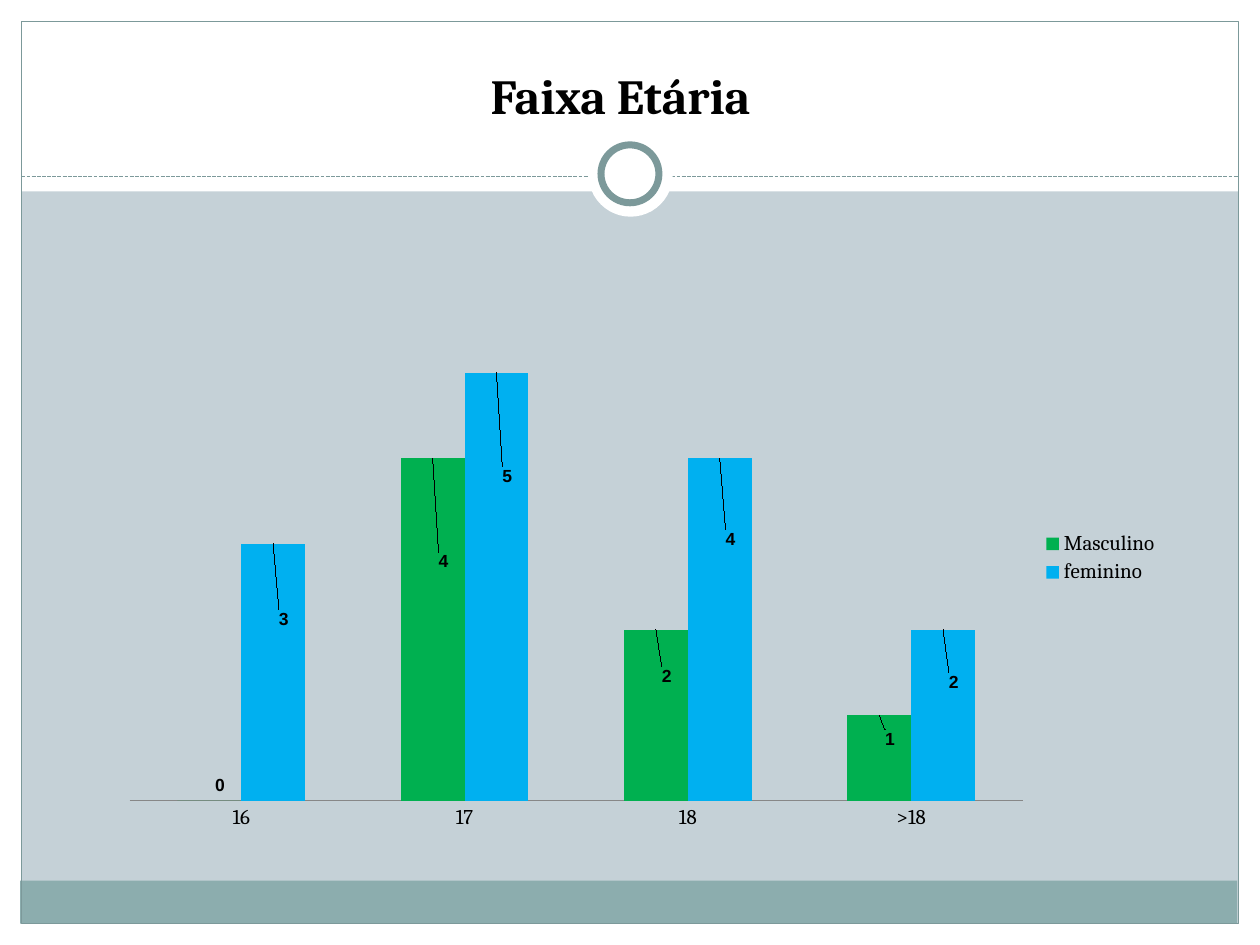
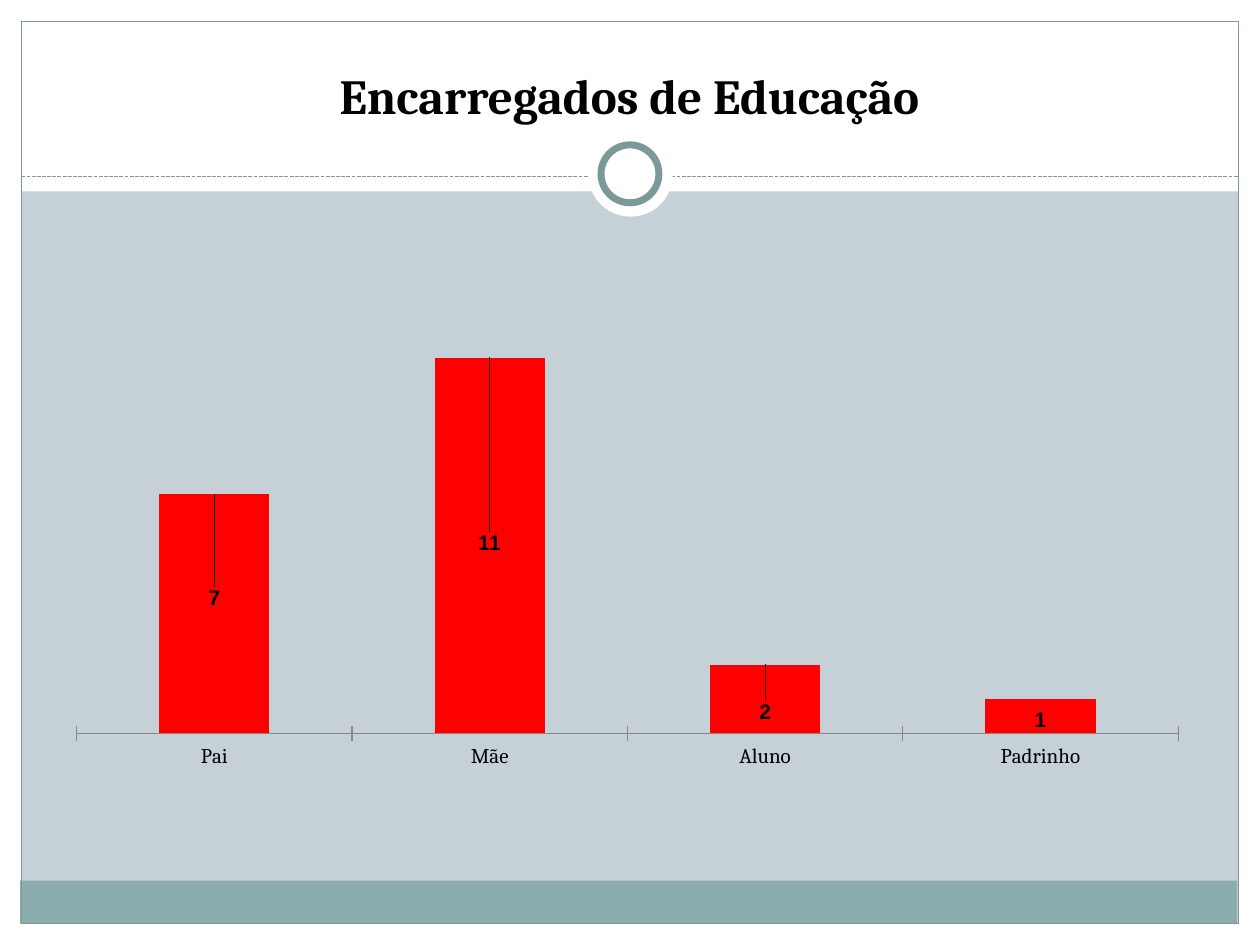
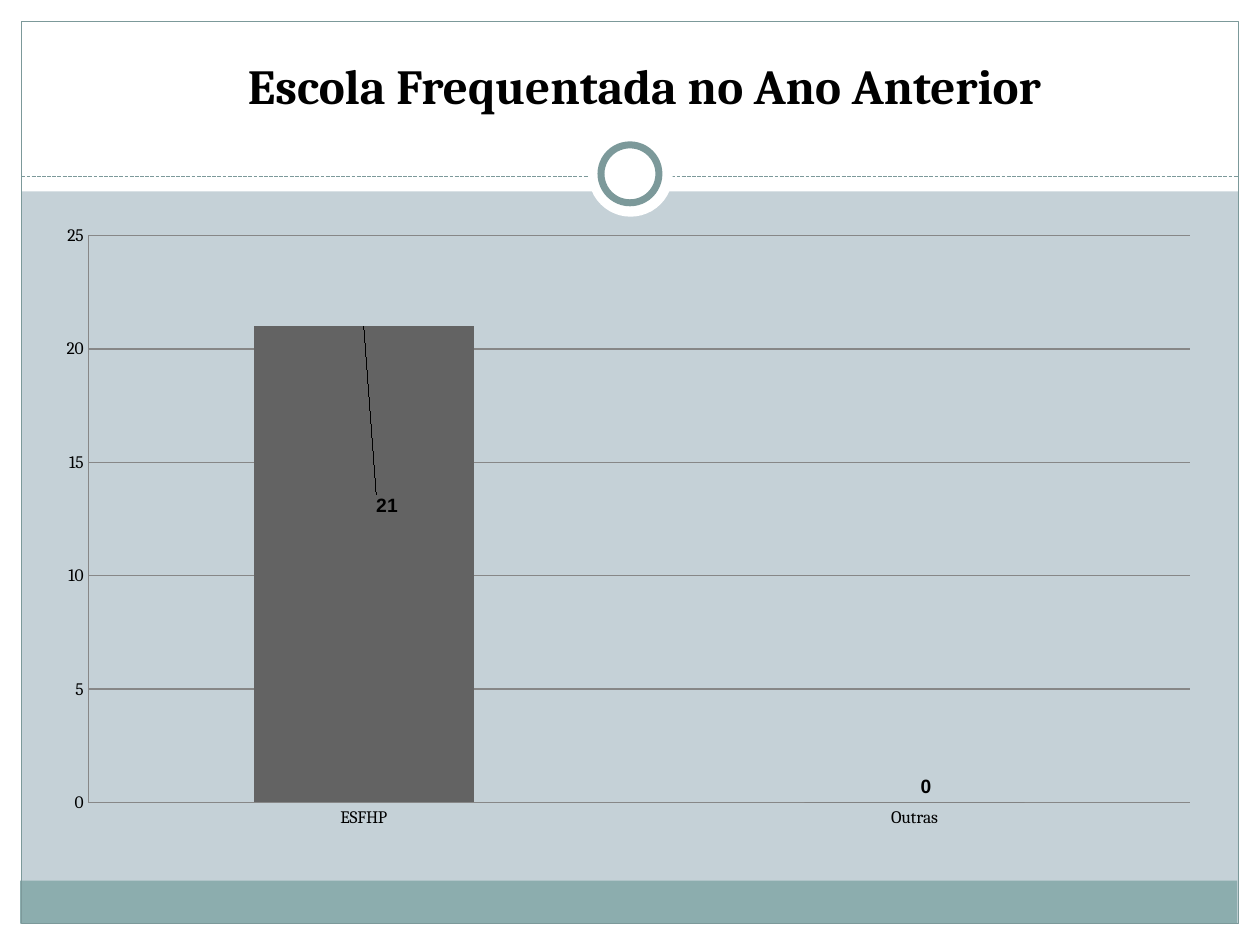
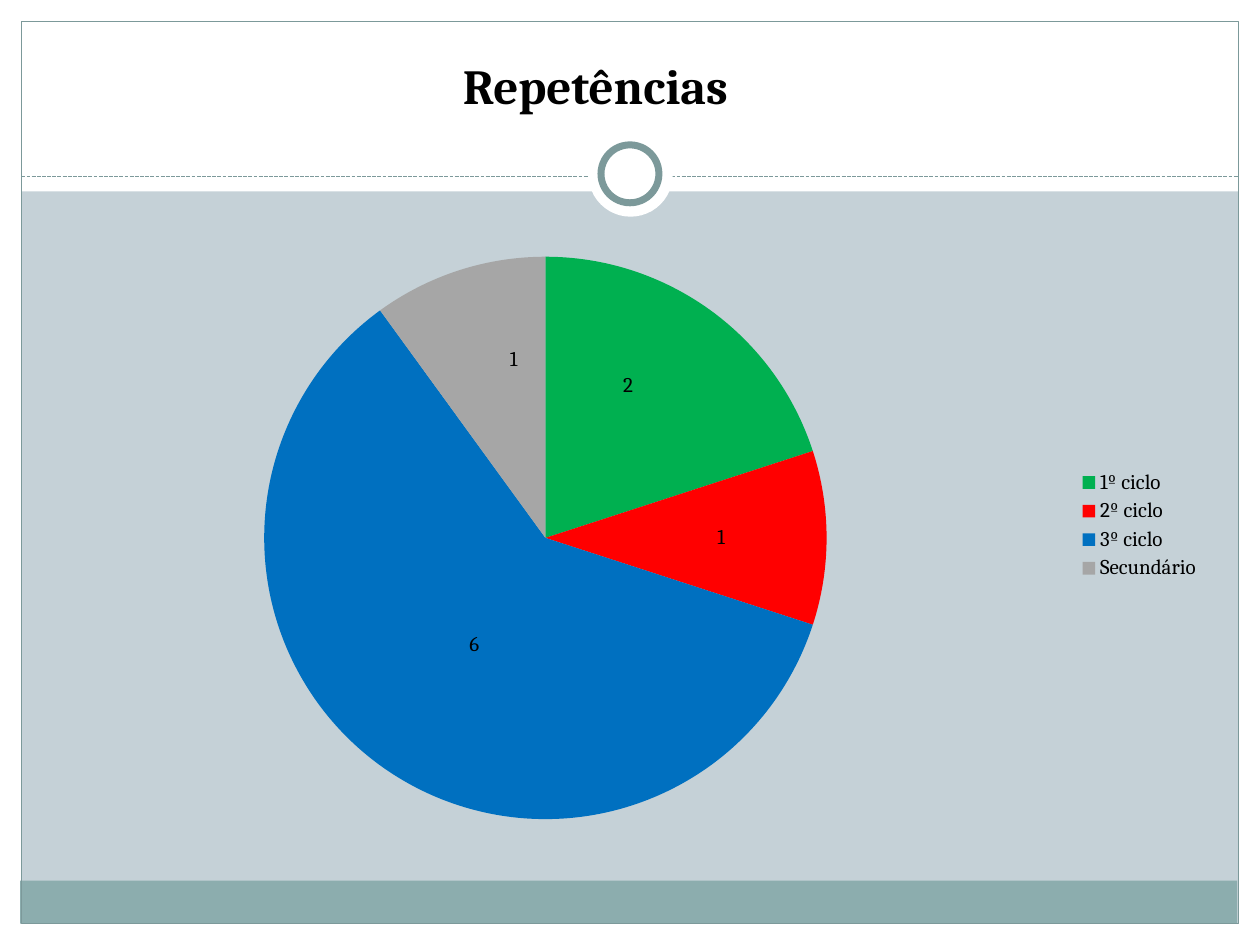
import pptx
import pptx.chart.data
import pptx.dml.color
import pptx.enum.chart
import pptx.enum.dml
import pptx.enum.shapes
import pptx.enum.text
import pptx.oxml
import pptx.oxml.ns
import pptx.util

Inches = pptx.util.Inches
Pt = pptx.util.Pt
SHAPE = pptx.enum.shapes.MSO_SHAPE
XL = pptx.enum.chart

COLORS = {
    "background": "C5D1D7", "white": "FFFFFF", "band": "8CADAE", "frame": "7C999A",
    "text": "000000", "axis": "878787", "green": "00B050", "sky": "00B0F0",
    "red": "FF0000", "blue": "0070C0", "silver": "A6A6A6", "charcoal": "636363",
}
FONT = "Cambria"
LABEL_FONT = "Arial"
CHART_BOX = (0.33, 1.67, 9.3, 5)


def rgb(name):
    """Return the colour with the given name."""
    return pptx.dml.color.RGBColor.from_string(COLORS[name])


def paint(fill, name):
    """Make a fill solid in a named colour."""
    fill.solid()
    fill.fore_color.rgb = rgb(name)


def stroke(line, name, width=0.75):
    """Give a line a named colour and a width in points."""
    line.color.rgb = rgb(name)
    line.width = Pt(width)


def style_font(font, size, bold=False, name=FONT):
    """Set the typeface, size and weight of black text."""
    font.name, font.size, font.bold = name, Pt(size), bold
    font.color.rgb = rgb("text")


def add_panel(s, box, kind=SHAPE.RECTANGLE, fill=None, line_width=None):
    """Add a plain shape, with a frame-coloured outline if it has a width."""
    sp = s.shapes.add_shape(kind, *map(Inches, box))
    sp.shadow.inherit = False
    if fill:
        paint(sp.fill, fill)
    else:
        sp.fill.background()
    if line_width:
        stroke(sp.line, "frame", line_width)
    else:
        sp.line.fill.background()
    return sp


def add_rule(s, left, right, y):
    """Add the dashed rule under the title."""
    rule = s.shapes.add_connector(
        pptx.enum.shapes.MSO_CONNECTOR.STRAIGHT,
        Inches(left), Inches(y), Inches(right), Inches(y))
    stroke(rule.line, "frame")
    rule.line.dash_style = pptx.enum.dml.MSO_LINE.SQUARE_DOT
    rule.line._get_or_add_ln().prstDash.set("val", "sysDash")
    rule._element.spPr.append(pptx.oxml.parse_xml(
        f"<a:effectLst {pptx.oxml.ns.nsdecls('a')}/>"))
    return rule


def decorate_layout(prs, layout):
    """Move the shared frame, bands and ring into the layout."""
    paint(layout.background.fill, "background")
    s = prs.slides.add_slide(layout)
    margins = [(0, 7.33, 10, 0.17), (0, 0, 10, 1.52), (0, 0, 0.17, 7.5), (9.83, 0, 0.17, 7.5)]
    parts = [add_panel(s, box, fill="white") for box in margins]
    parts += [
        add_panel(s, (0.16, 6.99, 9.66, 0.34), fill="band"),
        add_panel(s, (0.17, 0.17, 9.66, 7.16), line_width=0.75),
        add_rule(s, 0.17, 9.83, 1.4),
        add_panel(s, (4.67, 1.05, 0.67, 0.67), SHAPE.OVAL, "white"),
        add_panel(s, (4.77, 1.15, 0.46, 0.46), SHAPE.OVAL, "white", 4),
    ]
    for index, part in enumerate(parts, start=2):
        layout.shapes.element.insert(index, part.element)
    return s


def add_title(s, text, box):
    """Fill the title placeholder and fit it to its box."""
    title = s.shapes.title
    title.left, title.top, title.width, title.height = map(Inches, box)
    tf = title.text_frame
    tf.word_wrap = True
    tf.auto_size = pptx.enum.text.MSO_AUTO_SIZE.SHAPE_TO_FIT_TEXT
    tf.vertical_anchor = pptx.enum.text.MSO_ANCHOR.TOP
    p = tf.paragraphs[0]
    p.alignment = pptx.enum.text.PP_ALIGN.CENTER
    r = p.add_run()
    r.text = text
    style_font(r.font, 28, bold=True)


def manual_layout(**values):
    """Build a chart layout element from x, y and optionally w, h."""
    inner = ""
    if "w" in values:
        inner = ('<c:layoutTarget val="inner"/><c:xMode val="edge"/>'
                 '<c:yMode val="edge"/>')
    inner += "".join(f'<c:{key} val="{value}"/>' for key, value in values.items())
    return pptx.oxml.parse_xml(
        f"<c:layout {pptx.oxml.ns.nsdecls('c')}><c:manualLayout>{inner}"
        "</c:manualLayout></c:layout>")


def add_chart(s, kind, box, cats, series, plot_box):
    """Add a chart whose plot area takes the given fractions of its box."""
    data = pptx.chart.data.CategoryChartData()
    data.categories = cats
    for name, values in series:
        data.add_series(name, values)
    chart = s.shapes.add_chart(kind, *map(Inches, box), data).chart
    style_font(chart.font, 10)
    chart.has_title = False
    chart.has_legend = False
    area = chart._chartSpace.chart.plotArea
    for old in area.xpath("c:layout"):
        area.remove(old)
    x, y, w, h = plot_box
    area.insert(0, manual_layout(x=x, y=y, w=w, h=h))
    return chart


def add_legend(chart):
    """Show the legend at the right."""
    chart.has_legend = True
    chart.legend.position = XL.XL_LEGEND_POSITION.RIGHT
    chart.legend.include_in_layout = False
    style_font(chart.legend.font, 12)


def label_points(series, offsets, position, size, bold=True, font=LABEL_FONT):
    """Show values, each shifted by a fraction of the chart."""
    labels = series.data_labels
    labels.show_value = True
    style_font(labels.font, size, bold, font)
    for index in range(len(offsets)):
        label = series.points[index].data_label
        style_font(label.font, size, bold, font)
        label.position = position
    for element, (x, y) in zip(series._element.xpath("c:dLbls/c:dLbl"), offsets):
        element.insert(1, manual_layout(x=x, y=y))


def add_columns(s, box, cats, series, plot_box, top, label_size,
                cat_size=12, tick=XL.XL_TICK_MARK.NONE, scale=False, step=None):
    """Add a column chart; series hold name, values, colour and label offsets."""
    chart = add_chart(s, XL.XL_CHART_TYPE.COLUMN_CLUSTERED, box, cats,
                      [item[:2] for item in series], plot_box)
    plot = chart.plots[0]
    plot.vary_by_categories = False
    plot.gap_width, plot.overlap = 150, 0
    for ser, (_, _, color, offsets) in zip(plot.series, series):
        paint(ser.format.fill, color)
        label_points(ser, offsets, XL.XL_LABEL_POSITION.OUTSIDE_END, label_size)
    cat, val = chart.category_axis, chart.value_axis
    cat.major_tick_mark = tick
    style_font(cat.tick_labels.font, cat_size)
    stroke(cat.format.line, "axis")
    val.minimum_scale, val.maximum_scale = 0, top
    val.visible = val.has_major_gridlines = scale
    val.major_tick_mark = XL.XL_TICK_MARK.NONE
    if step:
        val.major_unit = step
    if scale:
        stroke(val.format.line, "axis")
        stroke(val.major_gridlines.format.line, "axis")
    return chart


def add_pie(s, box, slices, plot_box):
    """Add a pie; slices hold name, value, colour and label offset."""
    cats, values, colors, offsets = zip(*slices)
    chart = add_chart(s, XL.XL_CHART_TYPE.PIE, box, cats, [("Series 1", values)], plot_box)
    chart.plots[0].vary_by_categories = True
    ser = chart.plots[0].series[0]
    for index, color in enumerate(colors):
        paint(ser.points[index].format.fill, color)
    label_points(ser, offsets, XL.XL_LABEL_POSITION.CENTER, 12, False, FONT)
    add_legend(chart)


def age_slide(s):
    """Show ages by sex."""
    series = [
        ("Masculino", (0, 4, 2, 1), "green",
         [(0.01, 0), (0.01, 0.21), (0.01, 0.11), (0.01, 0.07)]),
        ("feminino", (3, 5, 4, 2), "sky",
         [(0.01, 0.16), (0.01, 0.21), (0.01, 0.17), (0.01, 0.12)]),
    ]
    chart = add_columns(s, (0.86, 2.19, 8.44, 4.48), ("16", "17", "18", ">18"), series,
                        (0.02, 0.02, 0.84, 0.91), 6, 10, step=3)
    add_legend(chart)
    add_title(s, "Faixa Etária", (3.05, 0.47, 3.75, 0.57))


def guardian_slide(s):
    """Show who the guardians are."""
    offsets = [(0, 0.19), (0, 0.32), (0, 0.1), (0, 0.06)]
    add_columns(s, CHART_BOX, ("Pai", "Mãe", "Aluno", "Padrinho"),
                [("Series 1", (7, 11, 2, 1), "red", offsets)],
                (0.03, 0.18, 0.94, 0.65), 12, 12, tick=XL.XL_TICK_MARK.CROSS)
    add_title(s, "Encarregados de Educação", (1.95, 0.47, 6.09, 0.57))


def school_slide(s):
    """Show the schools of the year before."""
    add_columns(s, CHART_BOX, ("ESFHP", "Outras"),
                [("Series 1", (21, 0), "charcoal", [(0.02, 0.31), (0.01, 0)])],
                (0.04, 0.04, 0.94, 0.9), 25, 11, cat_size=10, scale=True, step=5)
    add_title(s, "Escola Frequentada no Ano Anterior", (1.25, 0.39, 7.73, 0.57))


def repeat_slide(s):
    """Show repeated years by school cycle."""
    slices = [
        ("1º ciclo", 2, "green", (0, -0.06)),
        ("2º ciclo", 1, "red", (0.03, 0)),
        ("3º ciclo", 6, "blue", (0.01, -0.01)),
        ("Secundário", 1, "silver", (0.01, -0.07)),
    ]
    add_pie(s, CHART_BOX, slices, (0.19, 0.07, 0.48, 0.9))
    add_title(s, "Repetências", (2.11, 0.39, 5.23, 0.57))


def main():
    """Build and save the presentation."""
    prs = pptx.Presentation()
    prs.slide_width, prs.slide_height = Inches(10), Inches(7.5)
    layout = prs.slide_layouts.get_by_name("Title Only")
    age_slide(decorate_layout(prs, layout))
    for build in (guardian_slide, school_slide, repeat_slide):
        build(prs.slides.add_slide(layout))
    prs.save("out.pptx")


if __name__ == "__main__":
    main()
